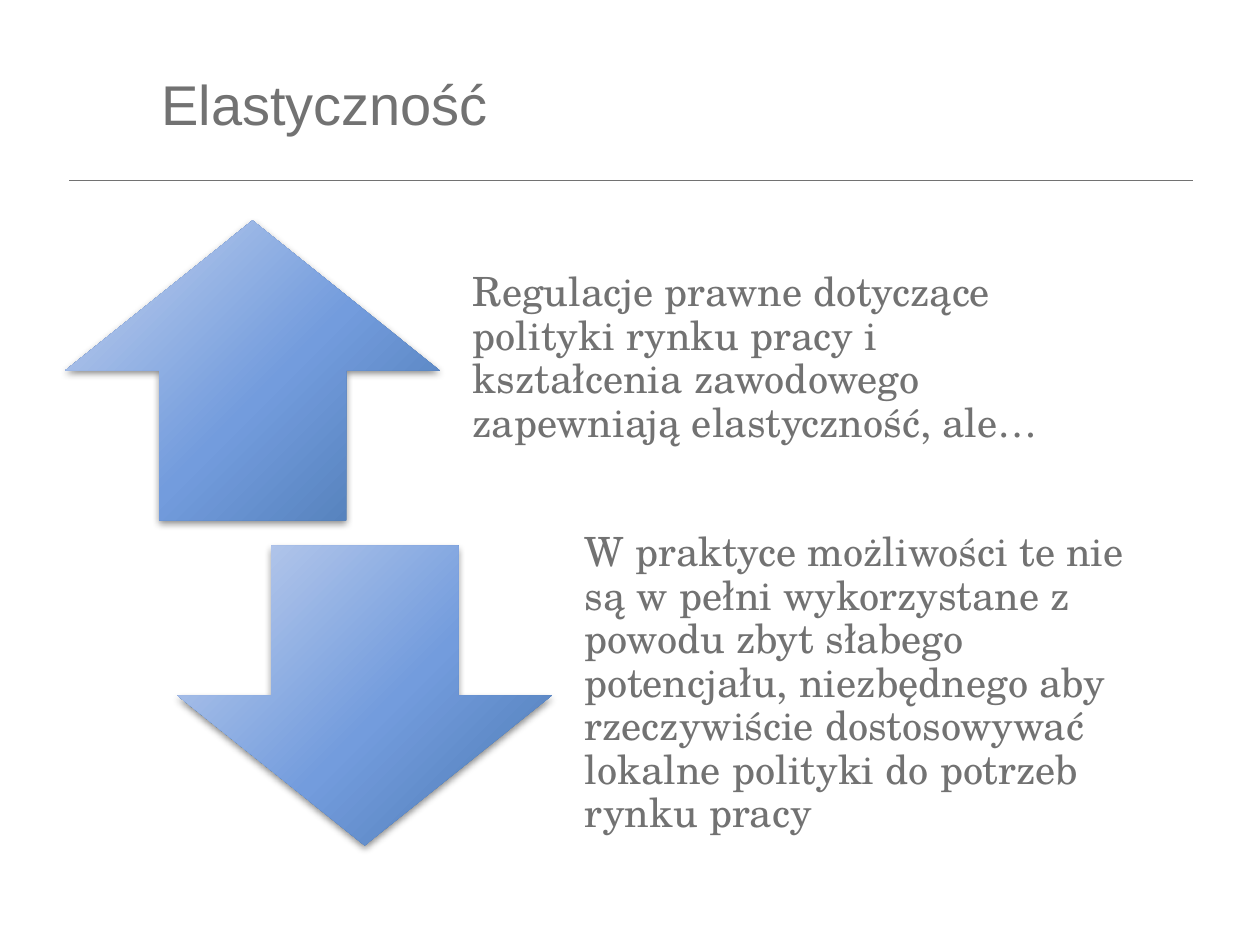
from dataclasses import dataclass

from lxml import etree
from pptx import Presentation
from pptx import util as u
from pptx.dml.color import RGBColor
from pptx.enum import shapes, text
from pptx.oxml import parse_xml
from pptx.oxml.ns import nsdecls, qn

COLORS = {"grey": "727272", "light": "C4D2EE", "middle": "739CDD",
          "dark": "4A78B0", "shadow": "000000"}
GRADIENT = ((0, "light"), (55, "middle"), (100, "dark"))

# Each row lies one step lower and further right than the one before
LEFT, TOP = 0.52, 1.75
STEP_X, STEP_Y = 0.89, 2.58
ARROW_WIDTH, ROW_HEIGHT = 2.97, 2.38
TEXT_OFFSET, TEXT_WIDTH = 3.05, 5.03


@dataclass
class Row:
    arrow: shapes.MSO_SHAPE
    message: str


ROWS = (
    Row(shapes.MSO_SHAPE.UP_ARROW,
        "Regulacje prawne dotyczące polityki rynku pracy i kształcenia "
        "zawodowego zapewniają elastyczność, ale…"),
    Row(shapes.MSO_SHAPE.DOWN_ARROW,
        "W praktyce możliwości te nie są w pełni wykorzystane z powodu zbyt "
        "słabego potencjału, niezbędnego aby rzeczywiście dostosowywać "
        "lokalne polityki do potrzeb rynku pracy"),
)


def box(*lengths: float) -> list:
    return [u.Inches(length) for length in lengths]


def set_font(paragraph, name: str, size: int) -> None:
    paragraph.font.name = name
    paragraph.font.size = u.Pt(size)
    paragraph.font.color.rgb = RGBColor.from_string(COLORS["grey"])


def add_arrow(slide, kind: shapes.MSO_SHAPE, left: float, top: float) -> None:
    arrow = slide.shapes.add_shape(kind, *box(left, top, ARROW_WIDTH, ROW_HEIGHT))
    arrow.line.fill.background()
    arrow.fill.background()
    arrow.shadow.inherit = False
    properties = arrow.element.spPr

    # Radial gradient centred beyond the top left corner
    stops = "".join(
        f'<a:gs pos="{share * 1000}"><a:srgbClr val="{COLORS[color]}"/></a:gs>'
        for share, color in GRADIENT)
    gradient = parse_xml(
        f'<a:gradFill {nsdecls("a")} rotWithShape="1"><a:gsLst>{stops}</a:gsLst>'
        '<a:path path="circle"><a:fillToRect l="-40000" t="-90000" '
        'r="140000" b="190000"/></a:path></a:gradFill>')
    properties.replace(properties.find(qn("a:noFill")), gradient)

    # Soft shadow straight below
    properties.find(qn("a:effectLst")).append(parse_xml(
        f'<a:outerShdw {nsdecls("a")} blurRad="{u.Pt(4)}" dist="{u.Pt(2)}" '
        f'dir="5400000" rotWithShape="0"><a:srgbClr val="{COLORS["shadow"]}">'
        '<a:alpha val="45000"/></a:srgbClr></a:outerShdw>'))


def add_message(slide, message: str, left: float, top: float) -> None:
    frame = slide.shapes.add_textbox(
        *box(left, top, TEXT_WIDTH, ROW_HEIGHT)).text_frame
    frame.word_wrap = True
    frame.vertical_anchor = text.MSO_ANCHOR.MIDDLE
    frame.margin_left = frame.margin_right = frame.margin_bottom = u.Inches(0.18)
    frame.margin_top = 0
    paragraph = frame.paragraphs[0]
    paragraph.text = message
    paragraph.line_spacing = 0.9
    set_font(paragraph, "TeX Gyre Schola", 23)


def add_rule(slide, left: float, top: float, width: float) -> None:
    rule = slide.shapes.add_connector(
        shapes.MSO_CONNECTOR.STRAIGHT, *box(left, top, left + width, top))
    rule.line.width = u.Pt(0.5)
    rule.line.color.rgb = RGBColor.from_string(COLORS["grey"])
    etree.SubElement(rule.element.spPr, qn("a:effectLst"))


def set_title(slide, heading: str) -> None:
    title = slide.shapes.title
    title.left, title.top, title.width, title.height = box(1.18, 0.26, 8.11, 1.12)
    title.text_frame.vertical_anchor = text.MSO_ANCHOR.MIDDLE
    paragraph = title.text_frame.paragraphs[0]
    paragraph.text = heading
    paragraph.alignment = text.PP_ALIGN.LEFT
    set_font(paragraph, "Arial", 32)


def main() -> None:
    deck = Presentation()
    deck.slide_width, deck.slide_height = box(10, 7.5)
    slide = deck.slides.add_slide(deck.slide_layouts[5])

    # Heading and rule
    set_title(slide, "Elastyczność")
    add_rule(slide, 0.55, 1.43, 8.92)

    # Opposing arrows with their messages
    for index, row in enumerate(ROWS):
        left, top = LEFT + index * STEP_X, TOP + index * STEP_Y
        add_arrow(slide, row.arrow, left, top)
        add_message(slide, row.message, left + TEXT_OFFSET, top)

    deck.save("out.pptx")


if __name__ == "__main__":
    main()
